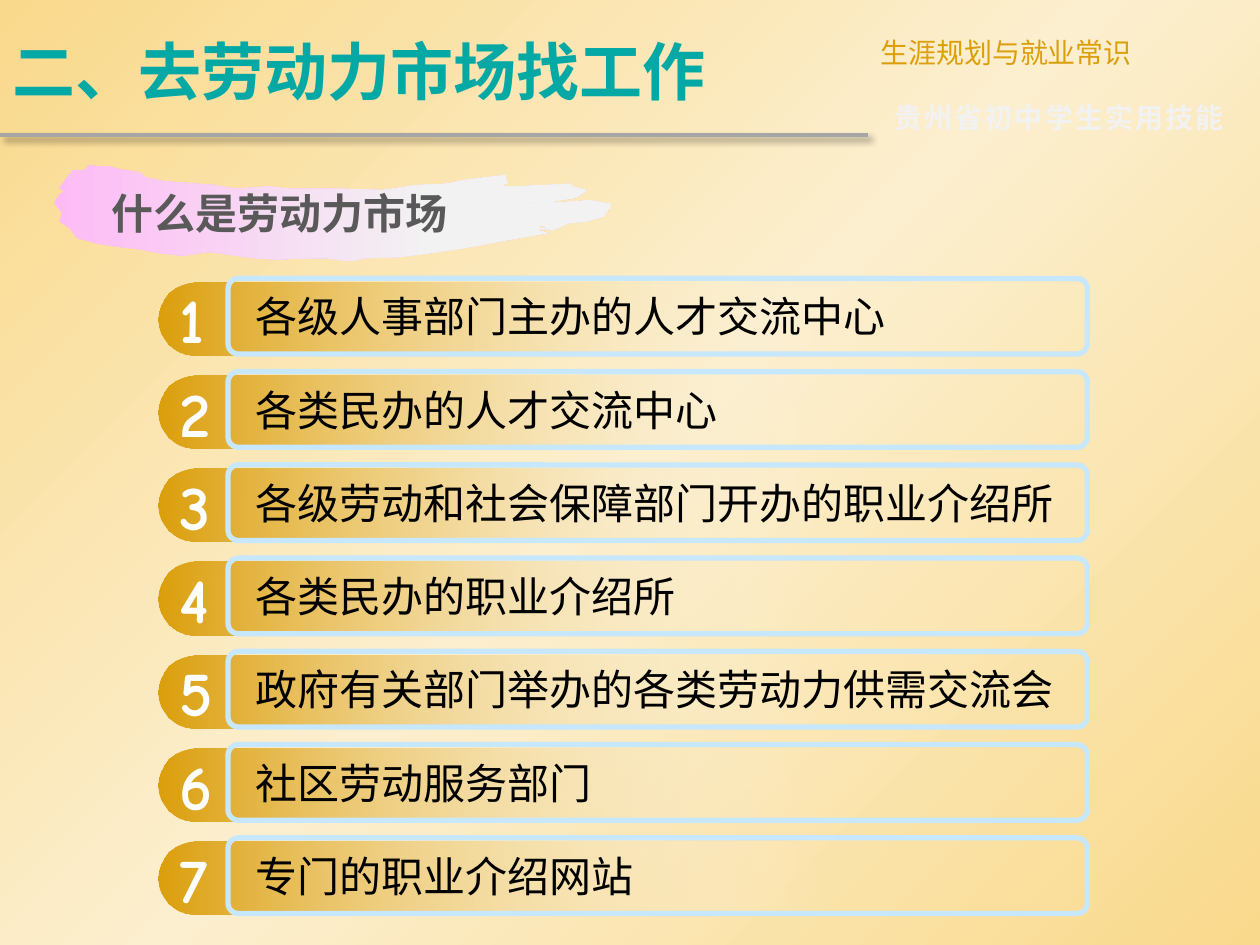
from lxml import etree
from pptx import Presentation
from pptx.dml.color import RGBColor
from pptx.enum.shapes import MSO_CONNECTOR, MSO_SHAPE
from pptx.enum.text import MSO_ANCHOR, PP_ALIGN
from pptx.oxml import parse_xml
from pptx.oxml.ns import nsdecls, qn
from pptx.util import Inches, Pt

LEFT, JUST = PP_ALIGN.LEFT, PP_ALIGN.JUSTIFY
TOP, MID = MSO_ANCHOR.TOP, MSO_ANCHOR.MIDDLE
ROUND = MSO_SHAPE.ROUNDED_RECTANGLE
STRAIGHT = MSO_CONNECTOR.STRAIGHT

GOLD = RGBColor(0xDC, 0x9F, 0x0C)
SAND = RGBColor(0xF9, 0xD9, 0x8C)
CREAM = RGBColor(0xFC, 0xEF, 0xCF)
TEAL = RGBColor(0x04, 0xA8, 0xA4)
PINK = RGBColor(0xFD, 0xBB, 0xF5)
PALE = RGBColor(0xF2, 0xF2, 0xF2)
SKY = RGBColor(0xC6, 0xE7, 0xFC)
GRAY = RGBColor(0xA6, 0xA6, 0xA6)
DARK = RGBColor(0x59, 0x59, 0x59)
BLACK = RGBColor(0, 0, 0)
WHITE = RGBColor(0xFF, 0xFF, 0xFF)

SANS = "Noto Sans CJK SC"
COMIC = "Comic Neue"
PITCH = 0.74

ITEMS = [
    "各级人事部门主办的人才交流中心",
    "各类民办的人才交流中心",
    "各级劳动和社会保障部门开办的职业介绍所",
    "各类民办的职业介绍所",
    "政府有关部门举办的各类劳动力供需交流会",
    "社区劳动服务部门",
    "专门的职业介绍网站",
]

BRUSH = [
    (0.71, 1.31), (0.67, 1.35), (0.58, 1.35), (0.53, 1.41), (0.47, 1.49),
    (0.49, 1.51), (0.51, 1.52), (0.47, 1.54), (0.43, 1.61), (0.45, 1.64),
    (0.49, 1.69), (0.47, 1.76), (0.55, 1.81), (0.61, 1.89), (0.8, 1.94),
    (0.95, 1.96), (1.12, 1.98), (1.27, 2.01), (1.45, 2.03), (1.66, 2),
    (2.02, 2.05), (2.2, 2.06), (2.46, 2.05), (2.6, 2.05), (2.73, 2.07),
    (2.81, 2.07), (2.89, 2.05), (3.18, 2.04), (3.49, 2), (3.8, 1.95),
    (3.9, 1.93), (4.12, 1.89), (4.35, 1.85), (4.27, 1.83), (4.29, 1.82),
    (4.36, 1.82), (4.29, 1.81), (4.27, 1.8), (4.3, 1.79), (4.38, 1.83),
    (4.52, 1.77), (4.65, 1.76), (4.79, 1.72), (4.84, 1.65), (4.85, 1.62),
    (4.68, 1.59), (4.41, 1.61), (4.16, 1.61), (4.19, 1.6), (4.33, 1.61),
    (4.57, 1.57), (4.66, 1.51), (4.54, 1.48), (4.53, 1.46), (4.12, 1.48),
    (3.99, 1.48), (4.01, 1.46), (4.03, 1.46), (4.01, 1.39), (3.68, 1.43),
    (3.54, 1.46), (3.3, 1.47), (3.04, 1.51), (2.74, 1.5), (2.48, 1.5),
    (2.3, 1.5), (2.14, 1.48), (1.88, 1.5), (1.76, 1.48), (1.7, 1.47),
    (1.31, 1.44), (1.16, 1.41), (1.11, 1.37), (0.93, 1.34), (0.86, 1.32),
    (0.78, 1.32),
]


def inch(*nums):
    return [Inches(n) for n in nums]


def shade(fill, root, stops, angle=0):
    fill.gradient()
    fill.gradient_angle = (360 - angle) % 360
    lst = next(root.iter(qn("a:gsLst")))
    for old in list(lst):
        lst.remove(old)
    for pos, color, alpha in stops:
        stop = etree.SubElement(lst, qn("a:gs"), pos=str(pos * 1000))
        tone = etree.SubElement(stop, qn("a:srgbClr"), val=str(color))
        if alpha < 100:
            etree.SubElement(tone, qn("a:alpha"), val=str(alpha * 1000))


def write(shape, text, size, color, face=SANS, bold=False, align=LEFT,
          anchor=TOP, wrap=True, space=0):
    frame = shape.text_frame
    frame.word_wrap = wrap
    frame.vertical_anchor = anchor
    para = frame.paragraphs[0]
    para.alignment = align
    run = para.add_run()
    run.text = text
    font = run.font
    font.size = Pt(size)
    font.bold = bold
    font.color.rgb = color
    font.name = face
    props = run.font._element
    etree.SubElement(props, qn("a:ea"), typeface=face)
    if space:
        props.set("spc", str(space))


def label(shapes, box, text, size, color, **form):
    write(shapes.add_textbox(*inch(*box)), text, size, color, **form)


def panel(shapes, box, curve):
    shape = shapes.add_shape(ROUND, *inch(*box))
    shape.shadow.inherit = False
    shape.adjustments[0] = curve
    return shape


def rule(shapes):
    line = shapes.add_connector(STRAIGHT, *inch(0, 1.07, 6.89, 1.07))
    line.line.color.rgb = GRAY
    line.line.width = Pt(2.25)
    line.element.spPr.append(parse_xml(
        f'<a:effectLst {nsdecls("a")}>'
        '<a:outerShdw blurRad="50800" dist="38100" dir="2700000" algn="tl" '
        'rotWithShape="0"><a:srgbClr val="000000"><a:alpha val="40000"/>'
        '</a:srgbClr></a:outerShdw></a:effectLst>'))


def stroke(shapes):
    group = shapes.add_group_shape().shapes
    path = group.build_freeform(*inch(*BRUSH[0]))
    path.add_line_segments([inch(*spot) for spot in BRUSH[1:]])
    shape = path.convert_to_shape()
    shape.shadow.inherit = False
    shape.line.fill.background()
    shade(shape.fill, shape.element, [(0, PINK, 100), (68, PALE, 100)])
    label(group, (0.79, 1.39, 3.49, 0.6), "什么是劳动力市场", 24, DARK,
          face="Calibri", bold=True, anchor=MID)


def row(shapes, num, text):
    top = 2.24 + PITCH * (num - 1)
    group = shapes.add_group_shape().shapes
    pill = panel(group, (1.26, top, 5.28, 0.58), 0.5)
    pill.line.fill.background()
    shade(pill.fill, pill.element, [(0, GOLD, 100), (100, WHITE, 0)])
    label(group, (1.93, top + 0.02, 6.69, 0.5), text, 24, BLACK)
    frame = panel(group, (1.81, top - 0.03, 6.82, 0.6), 0.137)
    frame.fill.background()
    frame.line.color.rgb = SKY
    frame.line.width = Pt(3)
    label(group, (1.33, top - 0.06, 0.38, 0.71), str(num), 36, WHITE,
          face=COMIC, bold=True, wrap=False)


def main():
    deck = Presentation()
    deck.slide_width, deck.slide_height = inch(10, 7.5)
    slide = deck.slides.add_slide(deck.slide_layouts[5])
    shapes = slide.shapes
    shade(slide.background.fill, slide.element,
          [(0, SAND, 100), (50, CREAM, 100), (100, SAND, 100)], 45)
    rule(shapes)
    label(shapes, (6.89, 0.23, 3.11, 0.37), "生涯规划与就业常识", 16, GOLD,
          align=JUST)
    label(shapes, (7, 0.75, 3, 0.37), "贵州省初中学生实用技能", 16, PALE,
          bold=True, space=130)
    title = shapes.title
    title.left, title.top, title.width, title.height = inch(0, 0.05, 6.89, 1.02)
    write(title, "二、去劳动力市场找工作", 36, TEAL, bold=True, anchor=MID)
    stroke(shapes)
    for num, text in enumerate(ITEMS, 1):
        row(shapes, num, text)
    deck.save("out.pptx")


if __name__ == "__main__":
    main()
